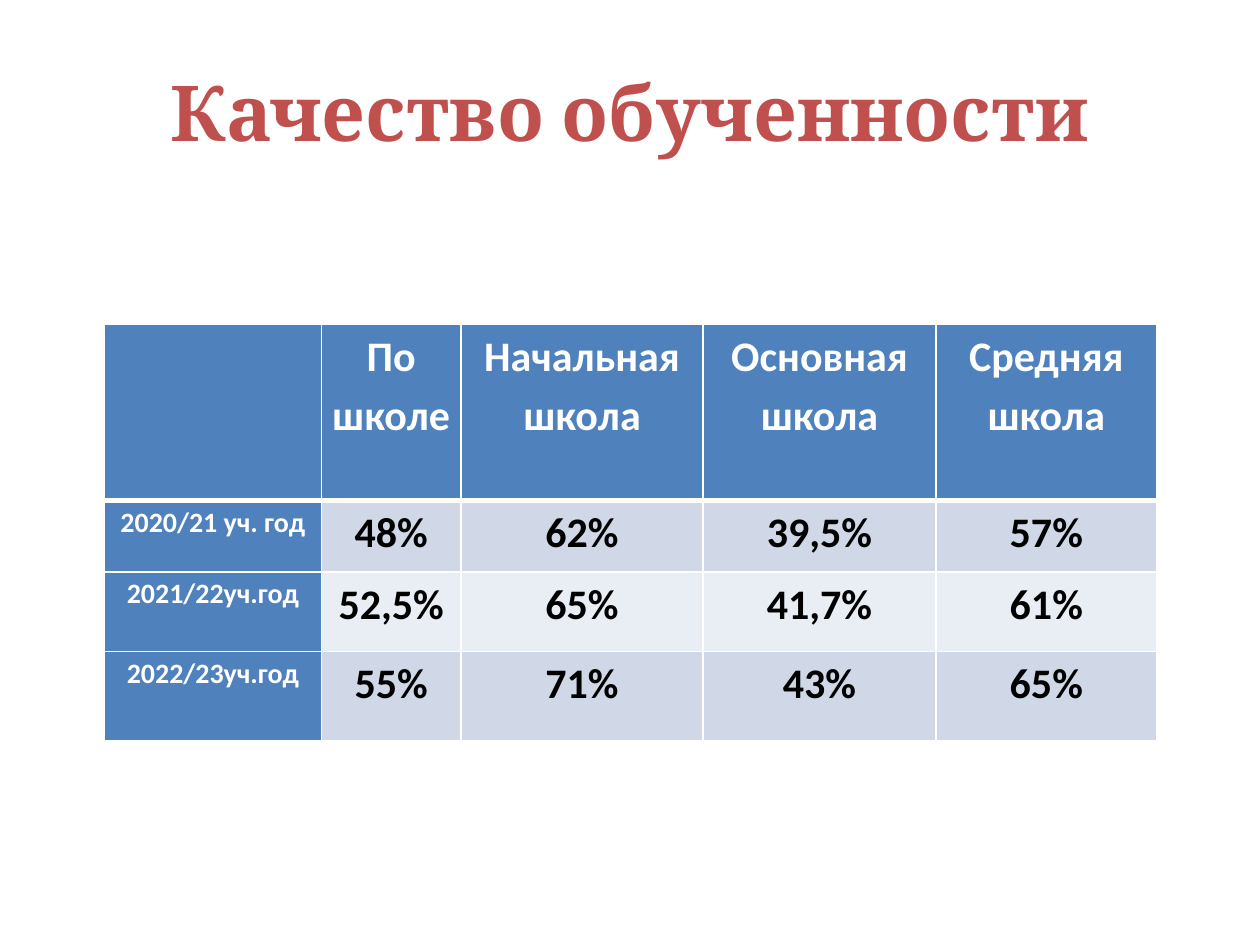
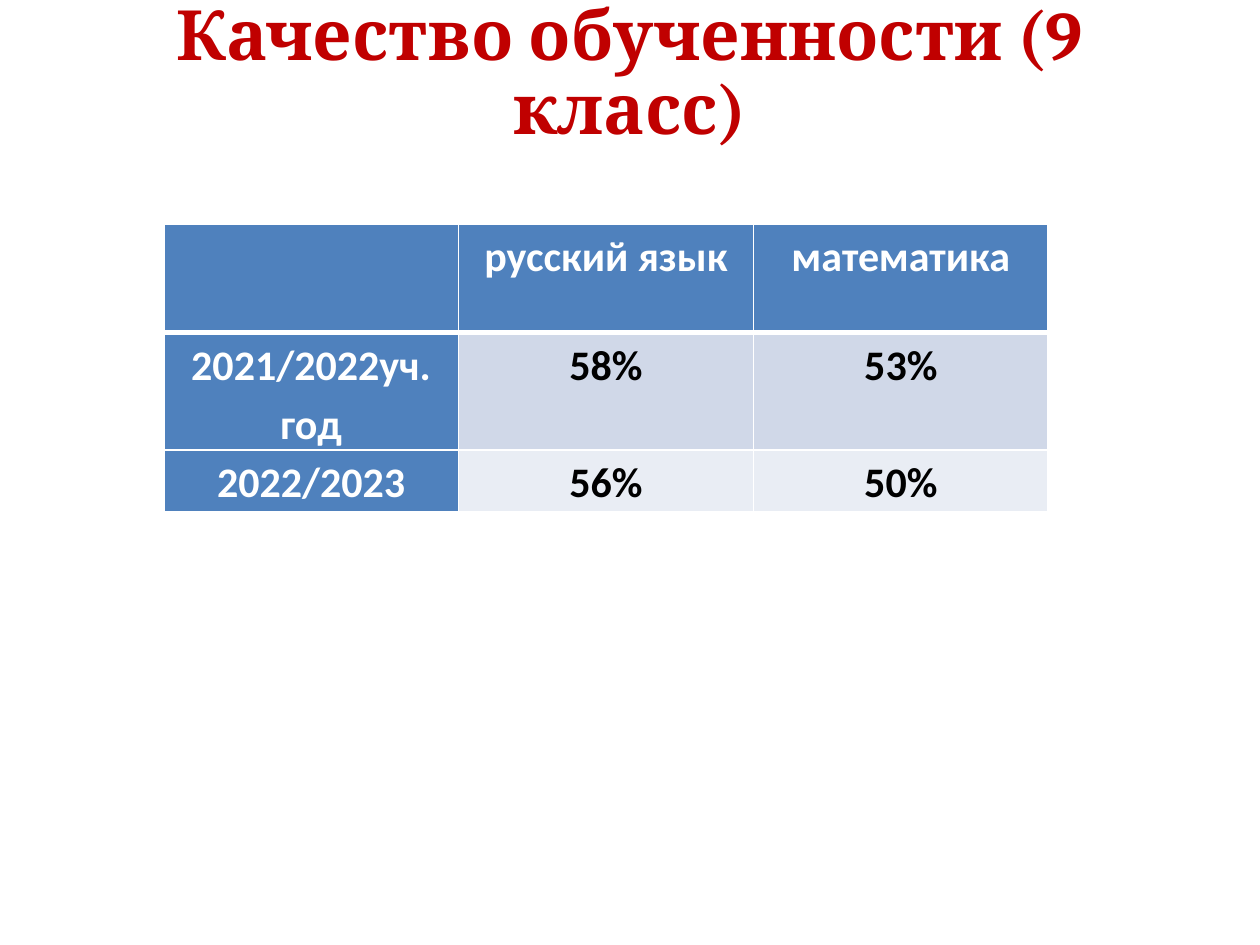
from lxml.etree import SubElement
from pptx import Presentation
from pptx.dml.color import RGBColor
from pptx.enum.text import MSO_ANCHOR, PP_ALIGN
from pptx.oxml.ns import qn
from pptx.util import Inches, Pt

COLORS = {
    "white": "FFFFFF",
    "black": "000000",
    "header": "4F81BD",
    "odd row": "D0D8E8",
    "even row": "E9EDF4",
    "soft red": "C0504D",
    "dark red": "C00000",
}

SLIDES = [
    {
        "title": "Качество обученности",
        "title color": "soft red",
        "title size": 44,
        "title bottom inset": 0.05,
        "table corner": (0.83, 2.57),
        "columns": [1.72, 1.11, 1.92, 1.85, 1.75],
        "row heights": [1.4, 0.57, 0.63, 0.71],
        "year size": 16,
        "cells": [
            ["", "По школе", "Начальная школа", "Основная школа", "Средняя школа"],
            ["2020/21 уч. год", "48%", "62%", "39,5%", "57%"],
            ["2021/22уч.год", "52,5%", "65%", "41,7%", "61%"],
            ["2022/23уч.год", "55%", "71%", "43%", "65%"],
        ],
    },
    {
        "title": "Качество обученности (9 класс)",
        "title color": "dark red",
        "title size": 39.6,
        "title bottom inset": 0.71,
        "table corner": (1.3, 1.78),
        "columns": [2.34] * 3,
        "row heights": [0.86, 0.93, 0.49],
        "year size": 24,
        "cells": [
            ["", "русский язык", "математика"],
            ["2021/2022уч.\nгод", "58%", "53%"],
            ["2022/2023", "56%", "50%"],
        ],
    },
]


def style_text(paragraph, font_name, size, color):
    paragraph.alignment = PP_ALIGN.CENTER
    paragraph.font.name = font_name
    paragraph.font.size = Pt(size)
    paragraph.font.bold = True
    paragraph.font.color.rgb = RGBColor.from_string(COLORS[color])


def add_borders(cell, row_index):
    """Draw white cell borders, with a thick line below the header row."""
    properties = cell._tc.get_or_add_tcPr()
    widths = {
        "a:lnL": 1,
        "a:lnR": 1,
        "a:lnT": 3 if row_index == 1 else 1,
        "a:lnB": 3 if row_index == 0 else 1,
    }
    for tag, width in widths.items():
        line = SubElement(properties, qn(tag), w=str(Pt(width)))
        fill = SubElement(line, qn("a:solidFill"))
        SubElement(fill, qn("a:srgbClr"), val=COLORS["white"])


deck = Presentation()
deck.slide_width = Inches(10)
deck.slide_height = Inches(7.5)

for content in SLIDES:
    page = deck.slides.add_slide(deck.slide_layouts[6])

    title_box = page.shapes.add_textbox(Inches(0.5), Inches(0.3), Inches(9), Inches(1.25))
    title_frame = title_box.text_frame
    title_frame.word_wrap = True
    title_frame.vertical_anchor = MSO_ANCHOR.MIDDLE
    title_frame.margin_bottom = Inches(content["title bottom inset"])
    title_frame.text = content["title"]
    title = title_frame.paragraphs[0]
    title.line_spacing = 0.9
    style_text(title, "Cambria", content["title size"], content["title color"])

    columns, heights = content["columns"], content["row heights"]
    left, top = content["table corner"]
    table = page.shapes.add_table(
        len(heights), len(columns),
        Inches(left), Inches(top), Inches(sum(columns)), Inches(sum(heights)),
    ).table
    table.first_col = True
    for column, width in zip(table.columns, columns):
        column.width = Inches(width)

    for row_index, texts in enumerate(content["cells"]):
        table.rows[row_index].height = Inches(heights[row_index])
        band = "odd row" if row_index % 2 else "even row"
        for column_index, text in enumerate(texts):
            cell = table.cell(row_index, column_index)
            is_header = row_index == 0 or column_index == 0
            add_borders(cell, row_index)
            cell.fill.solid()
            cell.fill.fore_color.rgb = RGBColor.from_string(COLORS["header" if is_header else band])
            cell.margin_left = cell.margin_right = Inches(0.07)
            cell.margin_top = cell.margin_bottom = 0
            cell.text = text
            size = content["year size"] if column_index == 0 else 24
            for paragraph in cell.text_frame.paragraphs:
                paragraph.line_spacing = 1.15
                style_text(paragraph, "Calibri", size, "white" if is_header else "black")

deck.save("out.pptx")
